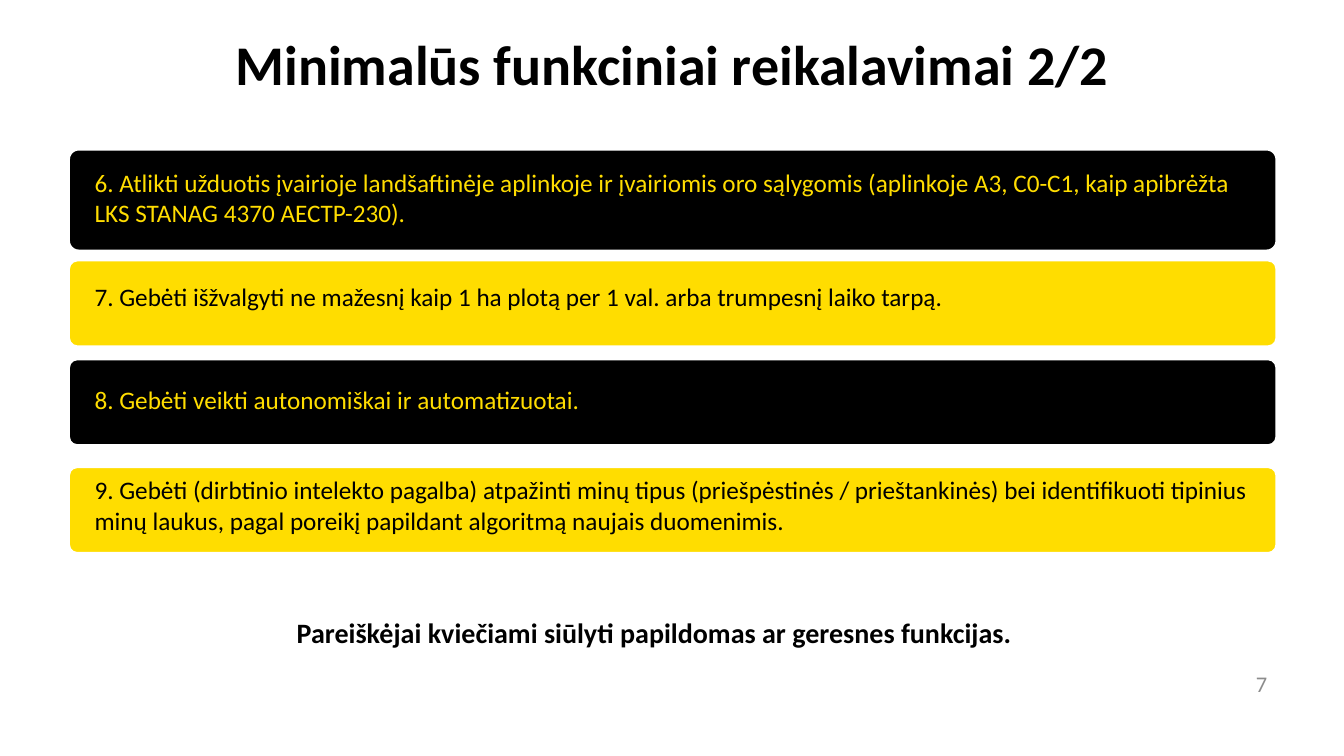
from dataclasses import dataclass

from pptx import Presentation
from pptx.dml.color import RGBColor
from pptx.enum.shapes import MSO_SHAPE
from pptx.enum.text import MSO_ANCHOR, PP_ALIGN
from pptx.slide import Slide
from pptx.util import Inches, Pt

ROUNDED = MSO_SHAPE.ROUNDED_RECTANGLE
TOP, MIDDLE = MSO_ANCHOR.TOP, MSO_ANCHOR.MIDDLE
LEFT, CENTER, RIGHT = PP_ALIGN.LEFT, PP_ALIGN.CENTER, PP_ALIGN.RIGHT

WIDTH, HEIGHT = Inches(13.33), Inches(7.5)
FONT = "Calibri"
BLACK, YELLOW, WHITE, GREY = "000000", "FFDD00", "FFFFFF", "8C8C8C"


@dataclass(frozen=True)
class Area:
    left: float
    top: float
    width: float
    height: float

    def lengths(self) -> tuple[int, int, int, int]:
        return (
            int(WIDTH * self.left / 100),
            int(HEIGHT * self.top / 100),
            int(WIDTH * self.width / 100),
            int(HEIGHT * self.height / 100),
        )


@dataclass(frozen=True)
class Label:
    area: Area
    text: str
    size: int
    color: str = BLACK
    bold: bool = False
    align: PP_ALIGN = LEFT
    anchor: MSO_ANCHOR = TOP


@dataclass(frozen=True)
class Requirement:
    bar_top: float
    bar_height: float
    text_top: float
    text: str


REQUIREMENTS = [
    Requirement(19.73, 13.47, 21.47, "6. Atlikti užduotis įvairioje landšaftinėje aplinkoje ir įvairiomis oro sąlygomis (aplinkoje A3, C0-C1, kaip apibrėžta LKS STANAG 4370 AECTP-230)."),
    Requirement(34.4, 11.47, 36.53, "7. Gebėti išžvalgyti ne mažesnį kaip 1 ha plotą per 1 val. arba trumpesnį laiko tarpą."),
    Requirement(47.47, 11.47, 50.13, "8. Gebėti veikti autonomiškai ir automatizuotai."),
    Requirement(61.73, 11.47, 62.13, "9. Gebėti (dirbtinio intelekto pagalba) atpažinti minų tipus (priešpėstinės / prieštankinės) bei identifikuoti tipinius minų laukus, pagal poreikį papildant algoritmą naujais duomenimis."),
]

LABELS = [
    Label(Area(7.5, 3.33, 85, 10), "Minimalūs funkciniai reikalavimai 2/2", 40, bold=True, align=CENTER, anchor=MIDDLE),
    Label(Area(71.7, 87.73, 23.33, 5.33), "7", 16, GREY, align=RIGHT, anchor=MIDDLE),
    Label(Area(3.68, 80.8, 90, 8.27), "Pareiškėjai kviečiami siūlyti papildomas ar geresnes funkcijas.", 20, bold=True, align=CENTER),
]


def color(value: str) -> RGBColor:
    return RGBColor.from_string(value)


def draw_label(page: Slide, label: Label) -> None:
    box = page.shapes.add_textbox(*label.area.lengths())
    frame = box.text_frame
    frame.word_wrap = True
    frame.vertical_anchor = label.anchor
    para = frame.paragraphs[0]
    para.alignment = label.align
    span = para.add_run()
    span.text = label.text
    span.font.name = FONT
    span.font.size = Pt(label.size)
    span.font.bold = label.bold
    span.font.color.rgb = color(label.color)


def draw_requirement(page: Slide, item: Requirement, fill: str, ink: str) -> None:
    area = Area(5.1, item.bar_top, 89.9, item.bar_height)
    bar = page.shapes.add_shape(ROUNDED, *area.lengths())
    bar.adjustments[0] = 0.1
    bar.shadow.inherit = False
    bar.fill.solid()
    bar.fill.fore_color.rgb = color(fill)
    bar.line.color.rgb = color(WHITE)
    bar.line.width = Pt(2)
    draw_label(page, Label(Area(6.3, item.text_top, 87.4, 9.4), item.text, 18, ink))


def main() -> None:
    deck = Presentation()
    deck.slide_width, deck.slide_height = WIDTH, HEIGHT
    page = deck.slides.add_slide(deck.slide_layouts[6])
    for index, item in enumerate(REQUIREMENTS):
        fill, ink = (YELLOW, BLACK) if index % 2 else (BLACK, YELLOW)
        draw_requirement(page, item, fill, ink)
    for label in LABELS:
        draw_label(page, label)
    deck.save("out.pptx")


if __name__ == "__main__":
    main()
